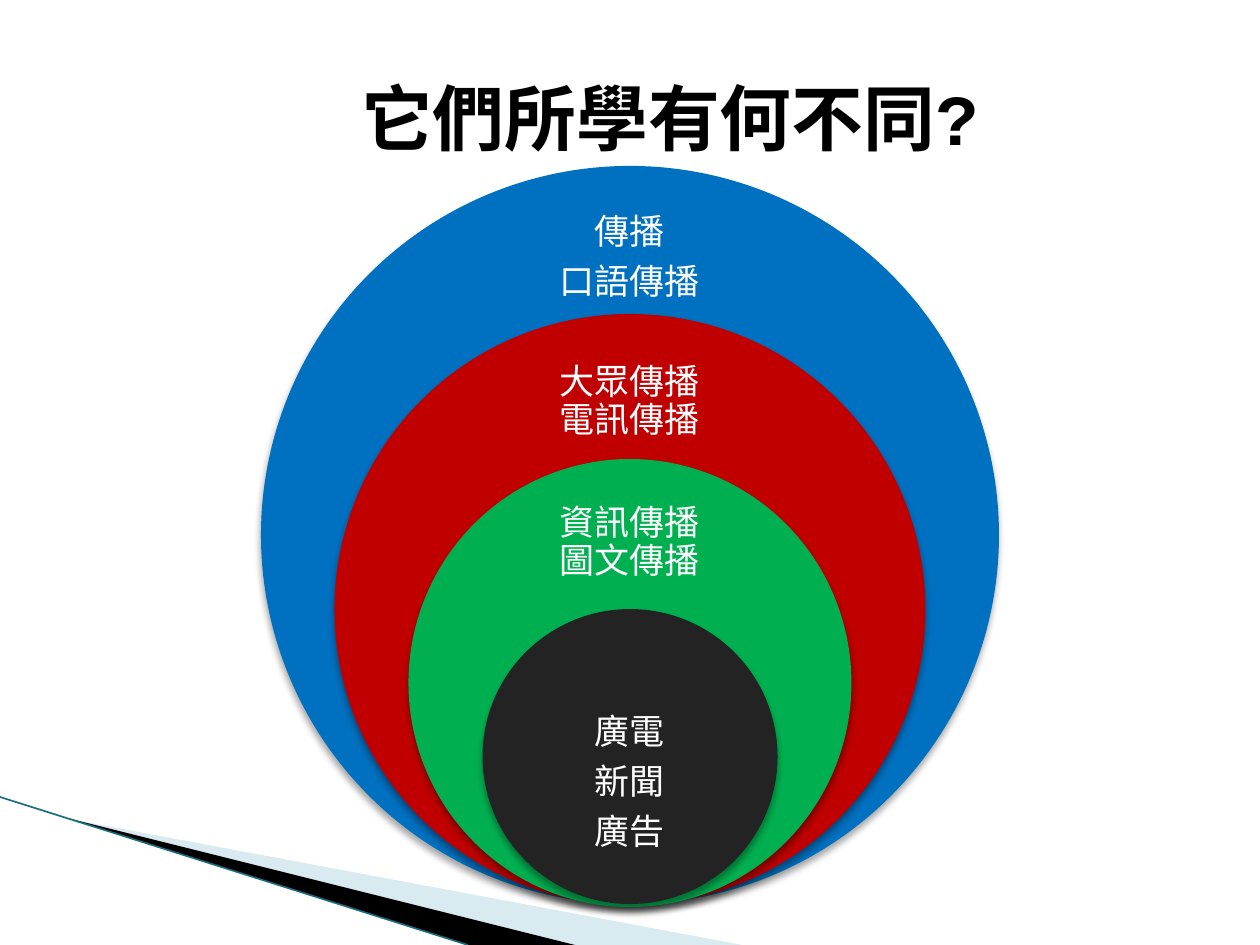
from lxml import etree
from pptx import Presentation
from pptx import util as u
from pptx.dml.color import RGBColor
from pptx.enum import shapes, text
from pptx.oxml.ns import qn

PX = 914400 / 126
BLACK = RGBColor(0x00, 0x00, 0x00)
WHITE = RGBColor(0xFF, 0xFF, 0xFF)
PALE = RGBColor(0xA0, 0xCB, 0xDC)
TEAL = RGBColor(0x1C, 0x6C, 0x7E)
BLUE = RGBColor(0x00, 0x70, 0xC0)
RED = RGBColor(0xC0, 0x00, 0x00)
GREEN = RGBColor(0x00, 0xB0, 0x50)
DARK = RGBColor(0x23, 0x23, 0x23)


def emu(*nums):
    return [round(n * PX) for n in nums]


def style(para, look):
    for key, val in look.items():
        setattr(para.font, key, val)
    para.alignment = text.PP_ALIGN.CENTER


prs = Presentation()
prs.slide_width, prs.slide_height = emu(1260, 945)
slide = prs.slides.add_slide(prs.slide_layouts[5])
items = slide.shapes

# Title
title = items.title
title.left, title.top, title.width, title.height = emu(178, 38, 984, 157)
frame = title.text_frame
frame.text = "它們所學有何不同?"
frame.vertical_anchor = text.MSO_ANCHOR.MIDDLE
style(frame.paragraphs[0], {"name": "Courier New", "size": u.Pt(41), "bold": True})
frame.paragraphs[0].font.color.rgb = BLACK

# Corner wedges
wedges = [
    (PALE, [(69, 819), (742, 945), (575, 945)]),
    (BLACK, [(67, 818), (575, 945), (468, 945)]),
]
for fill, pts in wedges:
    pen = items.build_freeform(*pts[0], scale=PX)
    pen.add_line_segments(pts[1:], close=True)
    wedge = pen.convert_to_shape()
    wedge.shadow.inherit = False
    wedge.fill.solid()
    wedge.fill.fore_color.rgb = fill
    wedge.line.fill.background()
    if fill == PALE:
        tone = wedge.fill._xPr.find(qn("a:solidFill"))[0]
        etree.SubElement(tone, qn("a:alpha"), val="40000")

# Corner edge line
edge = items.add_connector(shapes.MSO_CONNECTOR.STRAIGHT, *emu(0, 797, 468, 945))
edge.line.color.rgb = TEAL
edge.line.width = u.Pt(0.95)
etree.SubElement(edge._element.spPr, qn("a:effectLst"))

# Nested circles: fill, top, width, height, label top, label height, lines
rings = [
    (BLUE, 166, 738, 738, 203, 111, ["傳播", "口語傳播"]),
    (RED, 314, 591, 591, 349, 106, ["大眾傳播電訊傳播"]),
    (GREEN, 459, 443, 448, 493, 101, ["資訊傳播圖文傳播"]),
    (DARK, 609, 295, 295, 704, 158, ["廣電", "新聞", "廣告"]),
]
look = {"name": "Courier New", "size": u.Pt(20)}
for fill, top, wide, high, label_top, label_high, lines in rings:
    ring = items.add_shape(
        shapes.MSO_SHAPE.OVAL, *emu(630 - wide / 2, top, wide, high))
    ring.fill.solid()
    ring.fill.fore_color.rgb = fill
    ring.line.fill.background()

    # Soft shadow below the circle
    ring.shadow.inherit = False
    glow = etree.SubElement(
        ring._element.spPr.find(qn("a:effectLst")), qn("a:outerShdw"),
        blurRad="50800", dist="38100", dir="5400000", rotWithShape="0")
    tone = etree.SubElement(glow, qn("a:srgbClr"), val="000000")
    etree.SubElement(tone, qn("a:alpha"), val="35000")

    # Label
    label = items.add_textbox(*emu(526, label_top, 208, label_high))
    frame = label.text_frame
    frame.word_wrap = True
    frame.vertical_anchor = text.MSO_ANCHOR.MIDDLE
    for side in ("left", "top", "right", "bottom"):
        setattr(frame, "margin_" + side, emu(20)[0])
    for num, line in enumerate(lines):
        para = frame.add_paragraph() if num else frame.paragraphs[0]
        para.text = line
        para.line_spacing = 0.9
        para.space_after = u.Pt(7)
        style(para, look)
        para.font.color.rgb = WHITE

prs.save("out.pptx")
